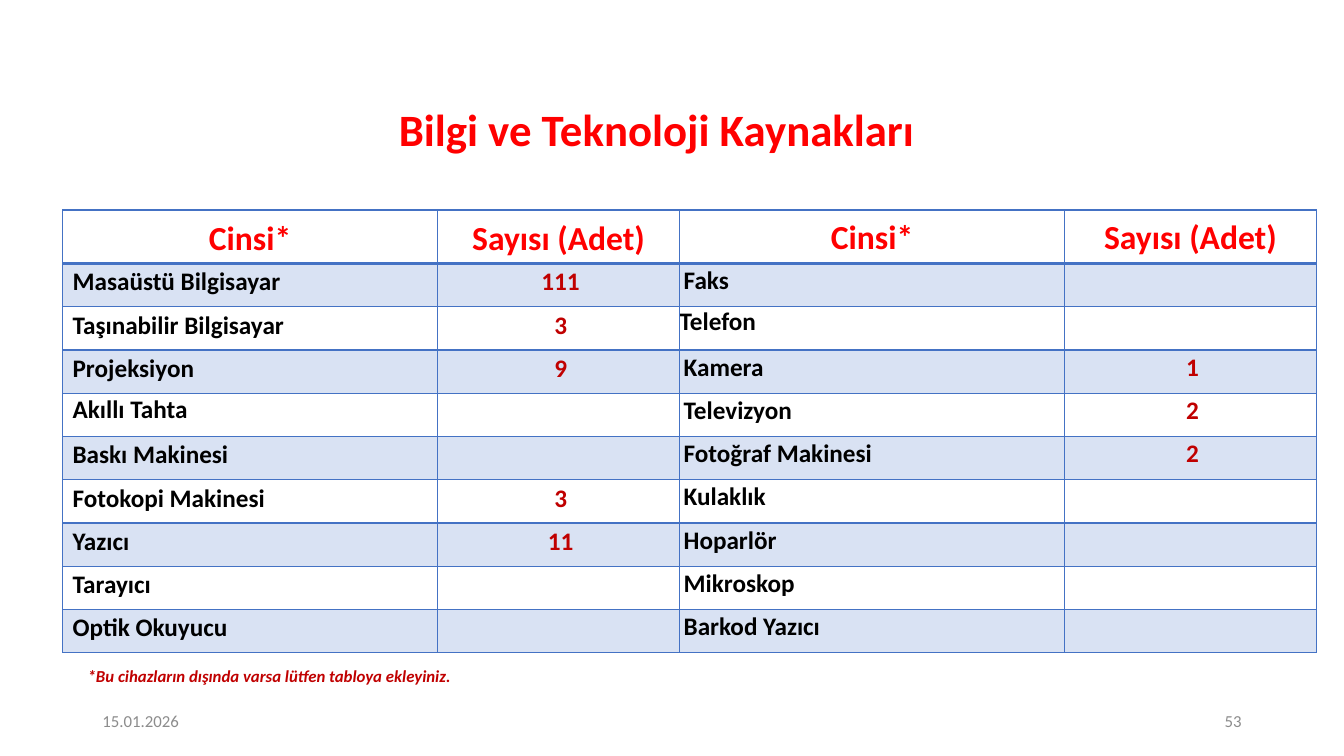
from lxml.etree import SubElement
from pptx import Presentation
from pptx.dml.color import RGBColor
from pptx.enum.text import MSO_ANCHOR, MSO_AUTO_SIZE, PP_ALIGN
from pptx.oxml.ns import qn
from pptx.util import Cm, Pt

COLORS = {"title": "FF0000", "count": "C00000", "item": "000000",
          "footer": "8C8C8C", "accent": "4472C4"}
HEADER = ["Cinsi*", "Sayısı (Adet)"] * 2
DEVICES = [
    ["Masaüstü Bilgisayar", "111", "Faks", ""],
    ["Taşınabilir Bilgisayar", "3", "Telefon", ""],
    ["Projeksiyon", "9", "Kamera", "1"],
    ["Akıllı Tahta", "", "Televizyon", "2"],
    ["Baskı Makinesi", "", "Fotoğraf Makinesi", "2"],
    ["Fotokopi Makinesi", "3", "Kulaklık", ""],
    ["Yazıcı", "11", "Hoparlör", ""],
    ["Tarayıcı", "", "Mikroskop", ""],
    ["Optik Okuyucu", "", "Barkod Yazıcı", ""],
]
COL_WIDTHS = [9.45, 6.1, 9.7, 6.35]
HEADER_HEIGHT, ROW_HEIGHT = 1.35, 1.09
TIGHT = {"Telefon", "Akıllı Tahta"}


class SlideBuilder:
    font = "Calibri"

    def __init__(self, prs):
        self.s = prs.slides.add_slide(prs.slide_layouts[5])

    def style(self, p, size, color, align=PP_ALIGN.LEFT, bold=False, italic=False):
        p.alignment = align
        f = p.font
        f.name, f.size, f.bold, f.italic = self.font, Pt(size), bold, italic
        f.color.rgb = RGBColor.from_string(COLORS[color])

    def title(self, text, left, top, width, height):
        sp = self.s.shapes.title
        sp.left, sp.top, sp.width, sp.height = map(Cm, (left, top, width, height))
        tf = sp.text_frame
        tf.text = text
        tf.vertical_anchor = MSO_ANCHOR.MIDDLE
        p = tf.paragraphs[0]
        p.line_spacing = 0.9
        self.style(p, 32, "title", PP_ALIGN.CENTER, bold=True)

    def text(self, text, left, top, width, height, color,
             anchor=MSO_ANCHOR.MIDDLE, grow=False, **style):
        sp = self.s.shapes.add_textbox(*map(Cm, (left, top, width, height)))
        tf = sp.text_frame
        tf.word_wrap = True
        tf.vertical_anchor = anchor
        if grow:
            tf.auto_size = MSO_AUTO_SIZE.SHAPE_TO_FIT_TEXT
        tf.text = text
        self.style(tf.paragraphs[0], 12, color, **style)

    def borders(self, cell, row):
        tcPr = cell._tc.get_or_add_tcPr()
        for side in "LRTB":
            thick = (row, side) in ((0, "B"), (1, "T"))
            ln = SubElement(tcPr, qn("a:ln" + side), w=str(Pt(2 if thick else 1)))
            fill = SubElement(ln, qn("a:solidFill"))
            SubElement(fill, qn("a:srgbClr"), val=COLORS["accent"])

    def shade(self, cell, row):
        if row % 2 == 0:
            cell.fill.background()
            return
        cell.fill.solid()
        cell.fill.fore_color.rgb = RGBColor.from_string(COLORS["accent"])
        color = cell._tc.tcPr.find(qn("a:solidFill")).find(qn("a:srgbClr"))
        SubElement(color, qn("a:alpha"), val="20000")

    def cell(self, cell, text, row, col):
        left_half, is_count, is_header = col < 2, col % 2 == 1, row == 0
        cell.margin_left = cell.margin_right = Cm(0.15 if left_half else 0)
        cell.margin_top = Cm(0.03 if left_half else 0)
        cell.margin_bottom = 0
        cell.vertical_anchor = MSO_ANCHOR.MIDDLE if is_header else MSO_ANCHOR.TOP
        self.borders(cell, row)
        self.shade(cell, row)
        cell.text = text
        p = cell.text_frame.paragraphs[0]
        if text and text not in TIGHT:
            p.line_spacing, p.space_after = 1.07, Pt(8)
        if not is_header and text != "Telefon":
            p._p.get_or_add_pPr().set("marL", str(Cm(0.1)))
        align = PP_ALIGN.CENTER if is_header or is_count else PP_ALIGN.LEFT
        color = "title" if is_header else "count" if is_count else "item"
        self.style(p, 24 if is_header else 18, color, align, bold=True)

    def table(self, rows, left, top):
        height = HEADER_HEIGHT + ROW_HEIGHT * (len(rows) - 1)
        tbl = self.s.shapes.add_table(
            len(rows), len(COL_WIDTHS), Cm(left), Cm(top),
            Cm(sum(COL_WIDTHS)), Cm(height)).table
        tbl.first_row = tbl.horz_banding = False
        for column, width in zip(tbl.columns, COL_WIDTHS):
            column.width = Cm(width)
        for r, values in enumerate(rows):
            tbl.rows[r].height = Cm(ROW_HEIGHT if r else HEADER_HEIGHT)
            for c, value in enumerate(values):
                self.cell(tbl.cell(r, c), value, r, c)


def main():
    prs = Presentation()
    prs.slide_width, prs.slide_height = Cm(33.87), Cm(19.05)
    b = SlideBuilder(prs)
    b.title("Bilgi ve Teknoloji Kaynakları", 0.74, 2.41, 31.62, 1.85)
    b.table([HEADER] + DEVICES, 1.58, 5.29)
    b.text("15.01.2026", 2.33, 17.65, 7.62, 1.02, "footer")
    b.text("53", 23.92, 17.65, 7.62, 1.02, "footer", align=PP_ALIGN.RIGHT)
    b.text("*Bu cihazların dışında varsa lütfen tabloya ekleyiniz.",
           1.96, 16.66, 12.7, 0.77, "count", anchor=MSO_ANCHOR.TOP,
           grow=True, bold=True, italic=True)
    prs.save("out.pptx")


if __name__ == "__main__":
    main()
